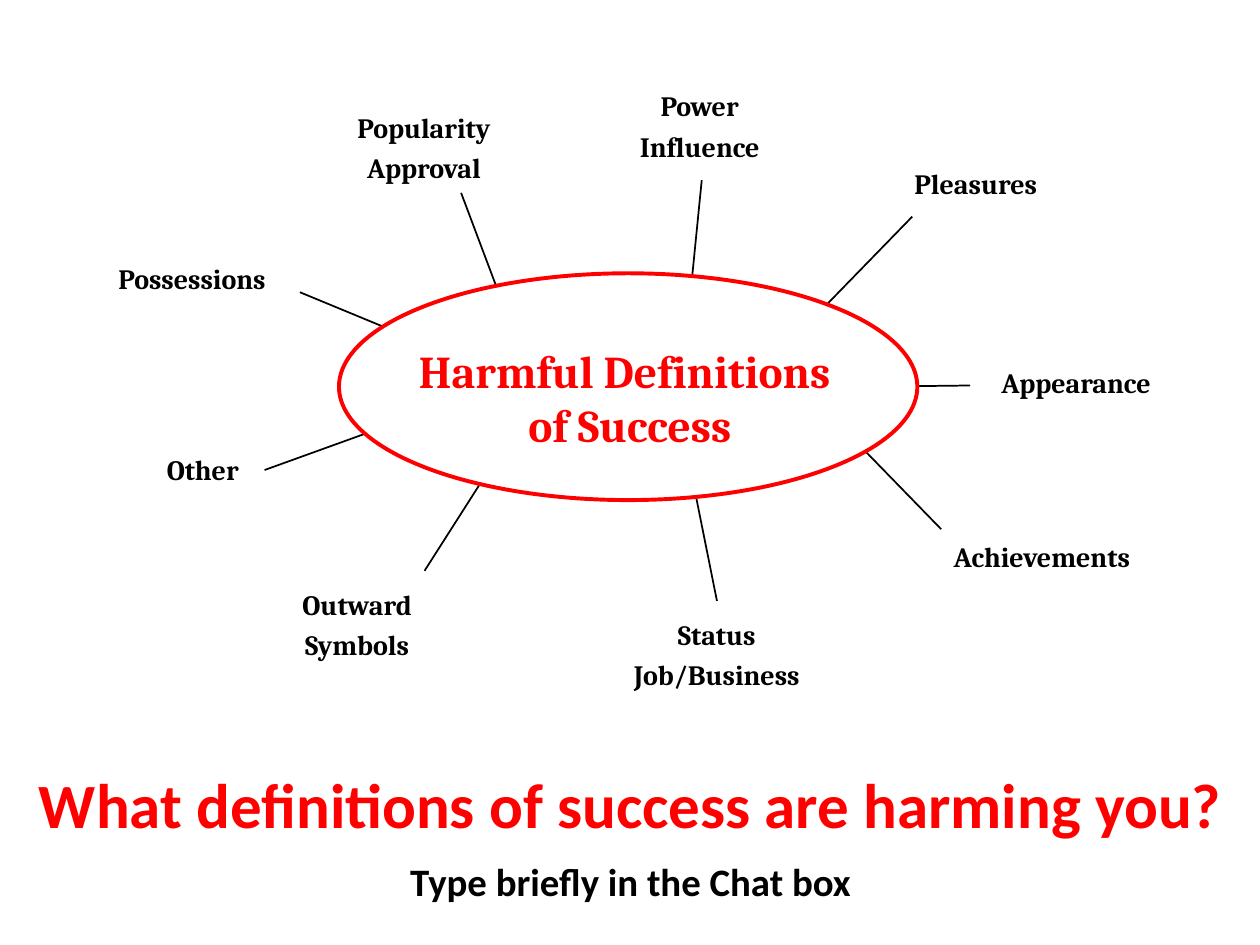
from pptx import Presentation
from pptx.dml.color import RGBColor
from pptx.enum.shapes import MSO_CONNECTOR, MSO_SHAPE
from pptx.enum.text import MSO_ANCHOR, MSO_AUTO_SIZE, PP_ALIGN
from pptx.oxml.ns import qn
from pptx.util import Pt
from lxml import etree

OVAL = MSO_SHAPE.OVAL
LINE = MSO_CONNECTOR.STRAIGHT
MIDDLE = MSO_ANCHOR.MIDDLE
FIXED = MSO_AUTO_SIZE.NONE
CENTER = PP_ALIGN.CENTER
RED = RGBColor(0xFF, 0x00, 0x00)
BLACK = RGBColor(0x00, 0x00, 0x00)
WHITE = RGBColor(0xFF, 0xFF, 0xFF)


def write(frame, rows, face, spacing):
    frame.word_wrap = True
    frame.auto_size = FIXED
    for i, (text, size, color) in enumerate(rows):
        para = frame.paragraphs[0] if i == 0 else frame.add_paragraph()
        for key, value in {"alignment": CENTER, **spacing}.items():
            setattr(para, key, value)
        run = para.add_run()
        run.text = text
        for key, value in {"name": face, "size": Pt(size), "bold": True}.items():
            setattr(run.font, key, value)
        run.font.color.rgb = color


def oval(left, top, width, height):
    shape = slide.shapes.add_shape(OVAL, Pt(left), Pt(top), Pt(width), Pt(height))
    shape.shadow.inherit = False
    return shape


prs = Presentation()
prs.slide_width, prs.slide_height = Pt(720), Pt(540)
slide = prs.slides.add_slide(prs.slide_layouts[5])

title = slide.shapes.title
place = {"left": 14.4, "top": 432.7, "width": 692, "height": 100}
for key, value in place.items():
    setattr(title, key, Pt(value))
title.text_frame.vertical_anchor = MIDDLE
title.text_frame.margin_left = title.text_frame.margin_right = 0
write(title.text_frame,
      [("What definitions of success are harming you?", 36, RED),
       ("Type briefly in the Chat box", 22.2, BLACK)],
      "Calibri",
      {"line_spacing": 0.7, "space_before": Pt(6), "space_after": Pt(12)})

spokes = [
    (401, 103, 394, 173.5),
    (220.3, 187.2, 171.4, 167),
    (287.3, 173.5, 263.5, 110.2),
    (223.2, 242.6, 151.2, 268.6),
    (537.8, 302.4, 484.6, 247.7),
    (409.7, 343.4, 396.7, 278.6),
    (285.8, 258.5, 242.6, 326.2),
    (521.3, 123.8, 467.3, 179.3),
    (554.4, 220.3, 493.2, 221),
]
for ends in spokes:
    spoke = slide.shapes.add_connector(LINE, *[Pt(end) for end in ends])
    spoke.line.color.rgb = BLACK
    spoke.line.width = Pt(1)
    etree.SubElement(spoke._element.spPr, qn("a:effectLst"))

hub = oval(193.7, 156.2, 330.5, 129.6)
hub.fill.solid()
hub.fill.fore_color.rgb = WHITE
hub.line.color.rgb = RED
hub.line.width = Pt(2.25)

box = slide.shapes.add_textbox(Pt(186.5), Pt(192.2), Pt(347), Pt(70.6))
write(box.text_frame,
      [("Harmful Definitions ", 26, RED), ("of Success", 26, RED)],
      "Cambria", {})

labels = [
    (["Achievements"], 500.4, 293, 190, 49.7, 1),
    (["Popularity", "Approval"], 157, 53.3, 170.6, 57.6, 1.2),
    (["Possessions"], 25.9, 116, 167.8, 85.7, 1),
    (["Power", "Influence"], 314.6, 34.6, 170.6, 70.6, 1.2),
    (["Status", "Job/Business"], 314.6, 337.7, 190, 69, 1.2),
    (["Outward Symbols"], 118.8, 326.2, 170.6, 57.6, 1.2),
    (["Appearance"], 535, 197.3, 159.8, 42.5, 1),
    (["Pleasures"], 472.3, 72.7, 170.6, 64, 1),
    (["Other"], 36, 247, 159.8, 42.5, 1),
]
for texts, left, top, width, height, pitch in labels:
    label = oval(left, top, width, height)
    label.fill.background()
    label.line.fill.background()
    label.text_frame.vertical_anchor = MIDDLE
    write(label.text_frame, [(text, 16, BLACK) for text in texts],
          "Cambria", {"line_spacing": pitch})

prs.save("out.pptx")
